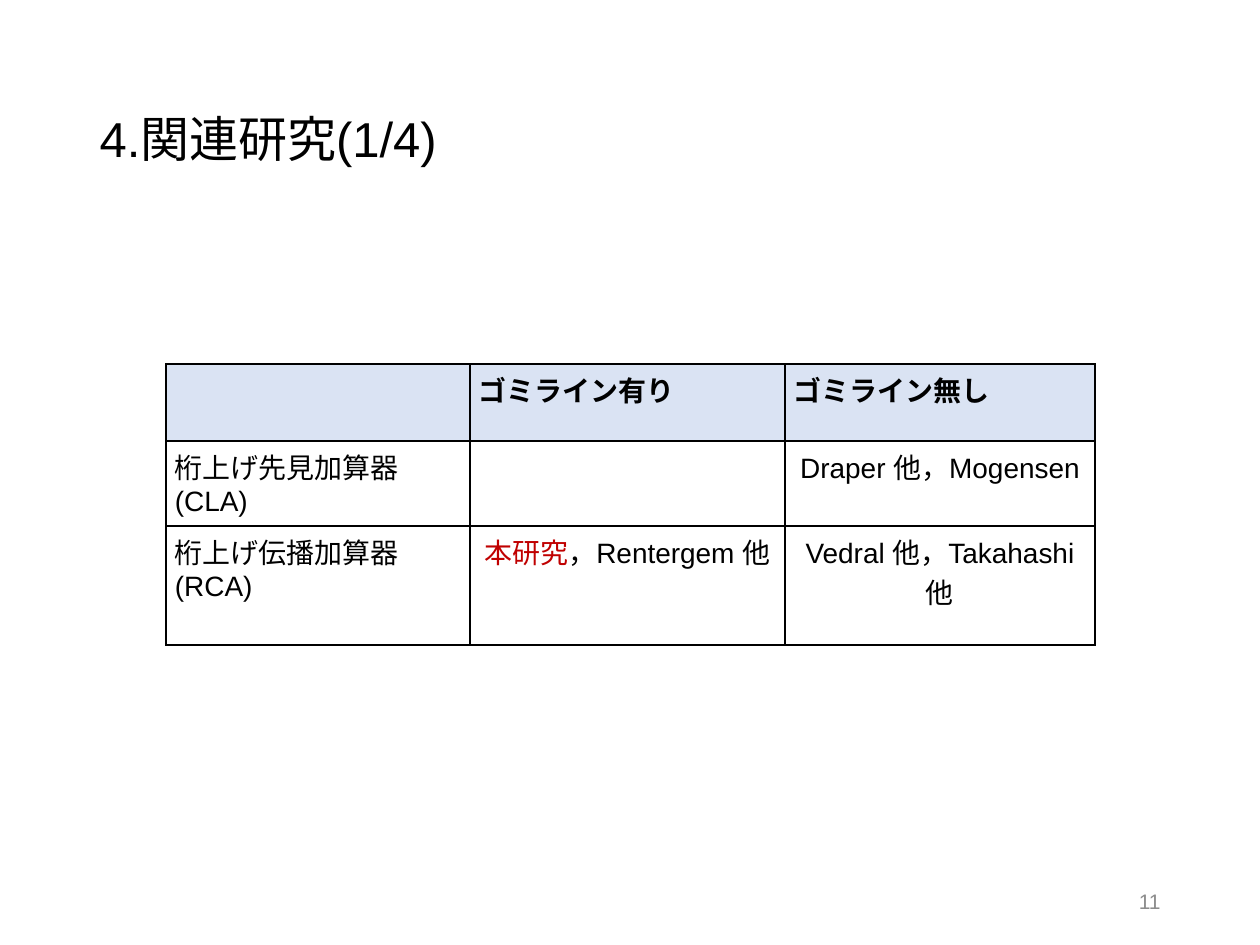
"""Build the related-work slide with its comparison table."""
from dataclasses import dataclass

from lxml.etree import SubElement
from pptx import Presentation
from pptx.dml.color import RGBColor
from pptx.enum.lang import MSO_LANGUAGE_ID
from pptx.enum.text import MSO_ANCHOR, MSO_AUTO_SIZE, PP_ALIGN
from pptx.oxml.ns import qn
from pptx.util import Emu, Pt

PX = 914400 // 126


@dataclass(frozen=True)
class Theme:
    font: str = "Arial"
    ink: str = "000000"
    accent: str = "C00000"
    muted: str = "8C8C8C"
    header: str = "DAE3F3"
    paper: str = "FFFFFF"
    title_size: int = 28
    table_size: int = 16
    number_size: int = 12


def px(*lengths):
    return [Emu(length * PX) for length in lengths]


def add_span(para, text, *, font, size, color, bold=False):
    span = para.add_run()
    span.text = text
    span.font.name = font
    span.font.size = Pt(size)
    span.font.bold = bold
    span.font.color.rgb = RGBColor.from_string(color)
    span.font.language_id = MSO_LANGUAGE_ID.JAPANESE


class SlideBuilder:
    def __init__(self, page, theme):
        self.page = page
        self.theme = theme

    def add_text(self, para, text, *, size, color=None, bold=False, align=PP_ALIGN.LEFT):
        para.alignment = align
        add_span(para, text, font=self.theme.font, size=size,
                 color=color or self.theme.ink, bold=bold)

    def title(self, text, left, top, width, height):
        box = self.page.shapes.title
        box.left, box.top, box.width, box.height = px(left, top, width, height)
        frame = box.text_frame
        frame.auto_size = MSO_AUTO_SIZE.NONE
        frame.vertical_anchor = MSO_ANCHOR.MIDDLE
        frame.paragraphs[0].line_spacing = 0.9
        self.add_text(frame.paragraphs[0], text, size=self.theme.title_size)

    def page_number(self, text, left, top, width, height):
        frame = self.page.shapes.add_textbox(*px(left, top, width, height)).text_frame
        frame.word_wrap = True
        frame.vertical_anchor = MSO_ANCHOR.MIDDLE
        self.add_text(frame.paragraphs[0], text, size=self.theme.number_size,
                      color=self.theme.muted, align=PP_ALIGN.RIGHT)

    def border(self, cell):
        properties = cell._tc.get_or_add_tcPr()
        for side in ("a:lnL", "a:lnR", "a:lnT", "a:lnB"):
            line = SubElement(properties, qn(side), w=str(Pt(1)))
            fill = SubElement(line, qn("a:solidFill"))
            SubElement(fill, qn("a:srgbClr"), val=self.theme.ink)

    def cell(self, cell, spans, *, header, align):
        self.border(cell)
        cell.fill.solid()
        cell.fill.fore_color.rgb = RGBColor.from_string(
            self.theme.header if header else self.theme.paper)
        cell.margin_left, cell.margin_right = px(9, 9)
        cell.margin_top, cell.margin_bottom = px(5, 5)
        for text, color in spans:
            self.add_text(cell.text_frame.paragraphs[0], text, size=self.theme.table_size,
                          color=color, bold=header, align=align)

    def table(self, rows, left, top, widths, heights):
        box = self.page.shapes.add_table(
            len(heights), len(widths), *px(left, top, sum(widths), sum(heights)))
        table = box.table
        table.horz_banding = False
        for column, width in zip(table.columns, px(*widths)):
            column.width = width
        for row, height in zip(table.rows, px(*heights)):
            row.height = height
        for i, row in enumerate(rows):
            for j, spans in enumerate(row):
                align = PP_ALIGN.CENTER if i and j else PP_ALIGN.LEFT
                self.cell(table.cell(i, j), spans, header=i == 0, align=align)


def main():
    deck = Presentation()
    deck.slide_width, deck.slide_height = px(1260, 945)
    theme = Theme()
    slide = SlideBuilder(deck.slides.add_slide(deck.slide_layouts[5]), theme)
    slide.title("4.関連研究(1/4)", 87, 50, 1086, 183)
    slide.page_number("11", 890, 876, 283, 50)
    ink = theme.ink
    rows = [
        [[], [("ゴミライン有り", ink)], [("ゴミライン無し", ink)]],
        [[("桁上げ先見加算器(CLA)", ink)], [], [("Draper 他，Mogensen", ink)]],
        [[("桁上げ伝播加算器(RCA)", ink)],
         [("本研究", theme.accent), ("，Rentergem 他", ink)],
         [("Vedral 他，Takahashi 他", ink)]],
    ]
    slide.table(rows, 166, 364, widths=[304, 315, 310], heights=[77, 85, 119])
    deck.save("out.pptx")


if __name__ == "__main__":
    main()
